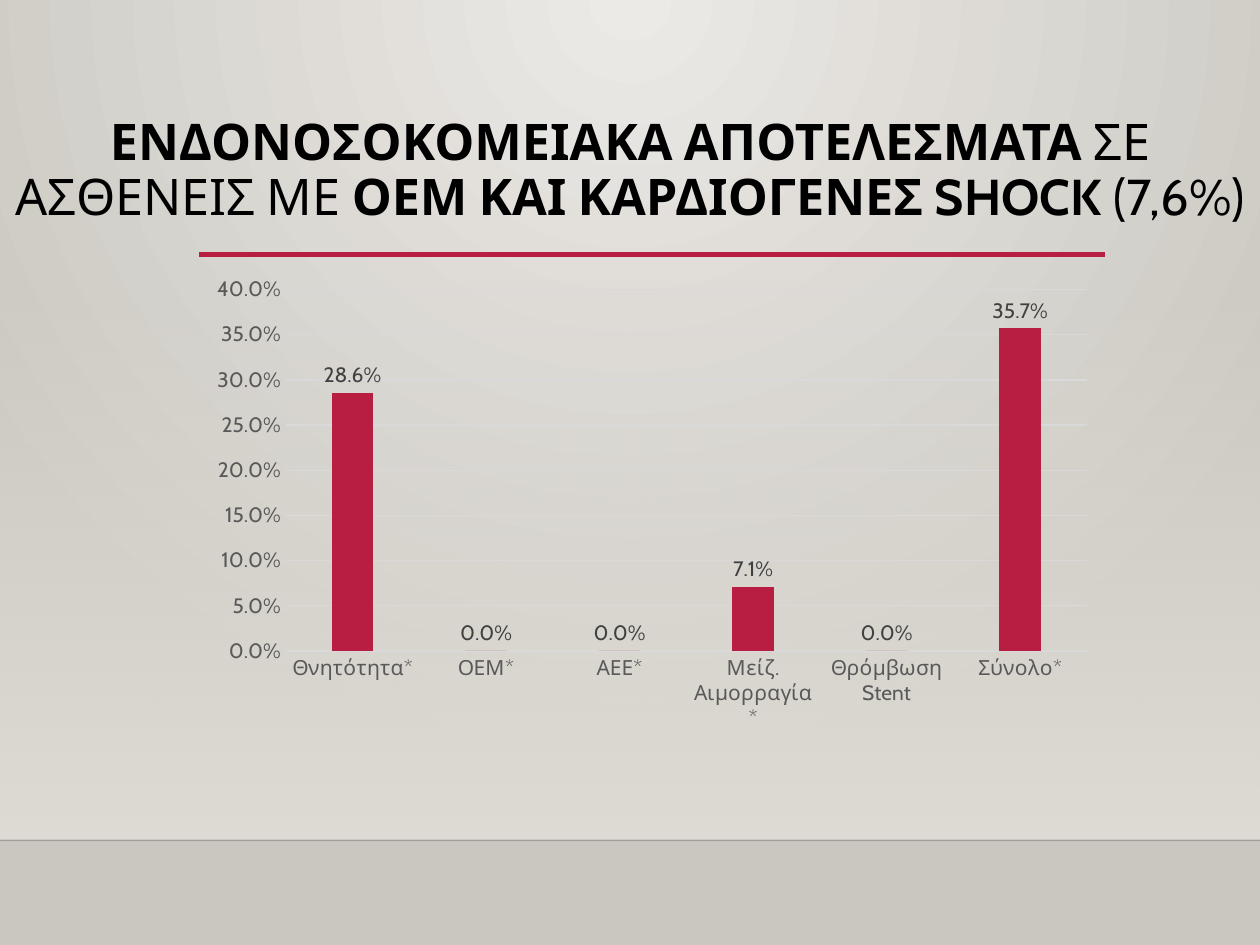
from lxml import etree
from pptx import Presentation
from pptx import util as u
from pptx.chart.data import CategoryChartData
from pptx.dml.color import RGBColor
from pptx.enum import chart as charts, shapes, text
from pptx.oxml import ns

CRIMSON = RGBColor(0xB7, 0x1E, 0x42)
BLACK = RGBColor(0, 0, 0)
EDGE = RGBColor(0, 0, 1)
GLOW = RGBColor(0xEC, 0xEA, 0xE7)
STONE = RGBColor(0xCA, 0xC7, 0xC1)
SAND = RGBColor(0xDF, 0xDB, 0xD5)
AXIS_TEXT = RGBColor(0x59, 0x59, 0x59)
LABEL_TEXT = RGBColor(0x40, 0x40, 0x40)
GRID = RGBColor(0xD9, 0xD9, 0xD9)


def apply(target, values):
    for name, value in values.items():
        setattr(target, name, value)


def add_element(parent, tag, **attributes):
    return etree.SubElement(parent, ns.qn(tag), attributes)


class SlideBuilder:
    """Hold the font and the current slide, and add styled elements to it."""

    font_name = "Cabin"
    percent = "0.0%"

    def __init__(self, slide):
        self.slide = slide

    def style_font(self, font, size, color):
        apply(font, {"name": self.font_name, "size": u.Pt(size)})
        font.color.rgb = color

    def gradient(self, fill, colors):
        fill.gradient()
        for stop, color in zip(fill.gradient_stops, colors):
            stop.color.rgb = color

    def background(self, inner, outer):
        self.gradient(self.slide.background.fill, (inner, outer))
        gradient = next(self.slide._element.iter(ns.qn("a:gradFill")))
        gradient.remove(gradient.find(ns.qn("a:lin")))
        path = add_element(gradient, "a:path", path="circle")
        add_element(path, "a:fillToRect", l="43000", t="0", r="43000", b="100000")

    def fading_panel(self, left, top, width, height, color):
        panel = self.slide.shapes.add_shape(
            shapes.MSO_SHAPE.RECTANGLE, *map(u.Inches, (left, top, width, height)))
        panel.shadow.inherit = False
        panel.line.fill.background()
        self.gradient(panel.fill, (color, color))
        panel.fill.gradient_angle = 270
        first_color = next(panel._element.spPr.iter(ns.qn("a:srgbClr")))
        add_element(first_color, "a:alpha", val="0")

    def rule(self, left, right, y, color, width, opacity=100):
        line = self.slide.shapes.add_connector(
            shapes.MSO_CONNECTOR.STRAIGHT, *map(u.Inches, (left, y, right, y)))
        line.line.color.rgb = color
        line.line.width = u.Pt(width)
        properties = line._element.spPr
        if opacity < 100:
            line_color = next(properties.iter(ns.qn("a:srgbClr")))
            add_element(line_color, "a:alpha", val=str(opacity * 1000))
        add_element(properties, "a:effectLst")

    def title(self, left, top, width, height, runs):
        title = self.slide.shapes.title
        apply(title, {"left": u.Inches(left), "top": u.Inches(top),
                      "width": u.Inches(width), "height": u.Inches(height)})
        apply(title.text_frame, {"word_wrap": True,
                                 "auto_size": text.MSO_AUTO_SIZE.NONE,
                                 "vertical_anchor": text.MSO_ANCHOR.TOP})
        paragraph = title.text_frame.paragraphs[0]
        apply(paragraph, {"alignment": text.PP_ALIGN.CENTER, "line_spacing": 0.9})
        for words, bold in runs:
            run = paragraph.add_run()
            run.text = words
            self.style_font(run.font, 28.8, BLACK)
            run.font.bold = bold

    def column_chart(self, left, top, width, height, values):
        data = CategoryChartData(number_format=self.percent)
        data.categories = list(values)
        data.add_series("Series 1", list(values.values()))
        chart = self.slide.shapes.add_chart(
            charts.XL_CHART_TYPE.COLUMN_CLUSTERED,
            *map(u.Inches, (left, top, width, height)), data).chart
        apply(chart, {"has_legend": False, "has_title": False})
        self.style_font(chart.font, 10, BLACK)

        for axis in (chart.category_axis, chart.value_axis):
            apply(axis, {"major_tick_mark": charts.XL_TICK_MARK.NONE,
                         "minor_tick_mark": charts.XL_TICK_MARK.NONE})
            self.style_font(axis.tick_labels.font, 12, AXIS_TEXT)
        value_axis = chart.value_axis
        apply(value_axis, {"minimum_scale": 0, "maximum_scale": 0.4,
                           "major_unit": 0.05, "has_major_gridlines": True})
        value_axis.format.line.fill.background()
        for line in (chart.category_axis.format.line,
                     value_axis.major_gridlines.format.line):
            line.color.rgb = GRID
            line.width = u.Pt(0.75)

        plot = chart.plots[0]
        apply(plot, {"gap_width": 219, "overlap": -27, "vary_by_categories": False})
        series = plot.series[0]
        series.format.fill.solid()
        series.format.fill.fore_color.rgb = CRIMSON
        labels = series.data_labels
        apply(labels, {"show_value": True,
                       "position": charts.XL_LABEL_POSITION.OUTSIDE_END})
        self.style_font(labels.font, 12, LABEL_TEXT)
        for numbers in (value_axis.tick_labels, labels):
            apply(numbers, {"number_format": self.percent,
                            "number_format_is_linked": False})


def main():
    presentation = Presentation()
    apply(presentation, {"slide_width": u.Inches(10), "slide_height": u.Inches(7.5)})
    title_only = presentation.slide_layouts[5]
    builder = SlideBuilder(presentation.slides.add_slide(title_only))

    builder.background(GLOW, STONE)
    builder.fading_panel(0, 2.2, 10, 4.46, SAND)
    builder.rule(0, 10, 6.67, EDGE, 1, opacity=20)
    builder.rule(1.58, 8.77, 2.02, CRIMSON, 2.5)
    builder.title(0, 0.88, 10, 1.15, [
        ("ΕΝΔΟΝΟΣΟΚΟΜΕΙΑΚΑ ΑΠΟΤΕΛΕΣΜΑΤΑ ", True),
        ("ΣΕ ΑΣΘΕΝΕΙΣ ΜΕ ", False),
        ("ΟΕΜ ΚΑΙ ΚΑΡΔΙΟΓΕΝΕΣ SHOCK ", True),
        ("(7,6%)", False),
    ])
    builder.column_chart(1.58, 2.2, 7.19, 3.77, {
        "Θνητότητα*": 0.286,
        "ΟΕΜ*": 0,
        "ΑΕΕ*": 0,
        "Μείζ. Αιμορραγία*": 0.071,
        "Θρόμβωση Stent": 0,
        "Σύνολο*": 0.357,
    })
    presentation.save("out.pptx")


if __name__ == "__main__":
    main()
